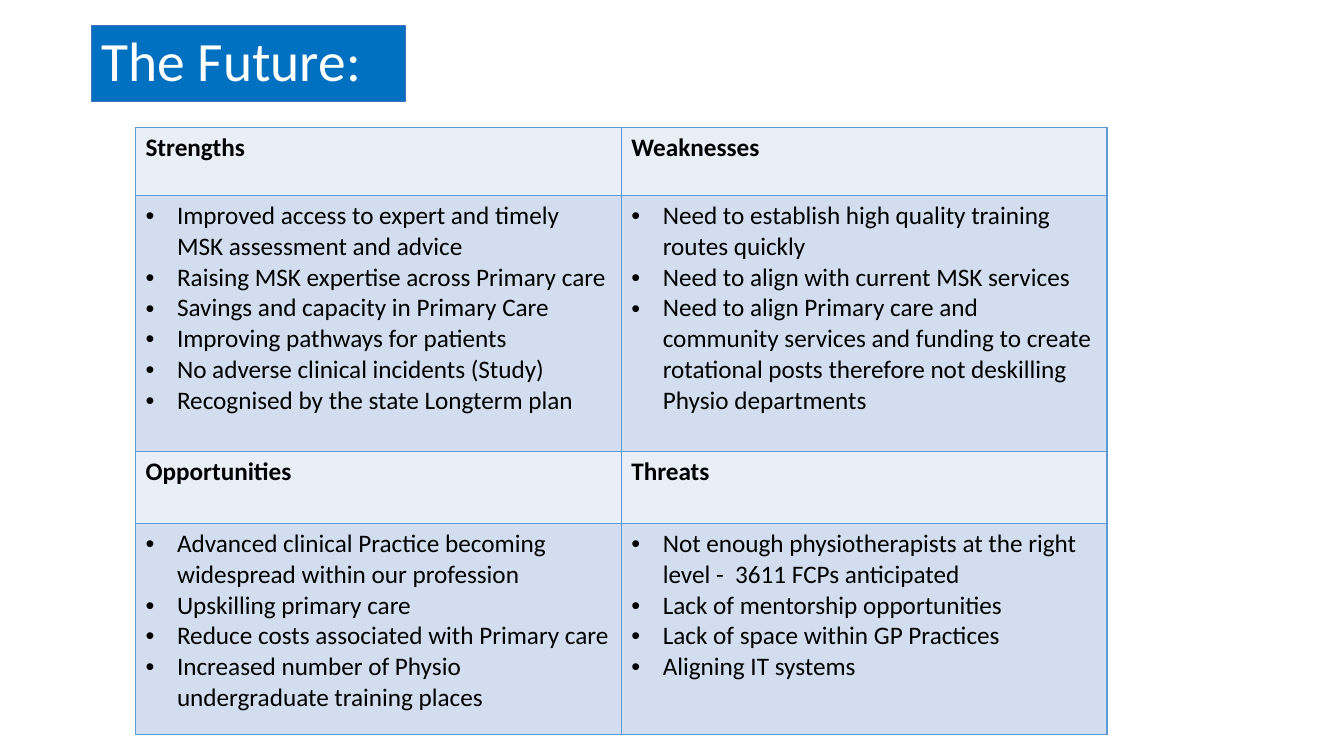
import pptx
import pptx.dml.color
import pptx.enum.shapes
import pptx.enum.text
import pptx.oxml.ns
import pptx.util
from lxml import etree

Pt = pptx.util.Pt
qn = pptx.oxml.ns.qn

FONT = "Calibri"
HEADING_FILL = "EAEFF7"
LIST_FILL = "D2DEEF"
BORDER = "5B9BD5"
INDENT = 22.5
ROW_HEIGHTS = [48.5, 182.8, 51.4, 151]
COLUMN_WIDTH = 347

SWOT = [
    [
        ("Strengths", [
            "Improved access to expert and timely MSK assessment and advice",
            "Raising MSK expertise across Primary care",
            "Savings and capacity in Primary Care",
            "Improving pathways for patients",
            "No adverse clinical incidents (Study)",
            "Recognised by the state Longterm plan",
        ]),
        ("Weaknesses", [
            "Need to establish high quality training routes quickly",
            "Need to align with current MSK services",
            "Need to align Primary care and community services and funding "
            "to create rotational posts therefore not deskilling Physio departments",
        ]),
    ],
    [
        ("Opportunities", [
            "Advanced clinical Practice becoming widespread within our profession",
            "Upskilling primary care",
            "Reduce costs associated with Primary care",
            "Increased number of Physio undergraduate training places",
        ]),
        ("Threats", [
            "Not enough physiotherapists at the right level -  3611 FCPs anticipated",
            "Lack of mentorship opportunities",
            "Lack of space within GP Practices",
            "Aligning IT systems",
        ]),
    ],
]


def color(value):
    return pptx.dml.color.RGBColor.from_string(value)


def add_bullet(paragraph):
    properties = paragraph._p.get_or_add_pPr()
    properties.set("marL", str(Pt(INDENT)))
    properties.set("indent", str(-Pt(INDENT)))
    etree.SubElement(properties, qn("a:buFont"), typeface="Arial")
    etree.SubElement(properties, qn("a:buChar"), char="•")


def write_text(frame, lines, size=18, fill="000000", bold=False, bullets=False, spacing=None):
    for index, line in enumerate(lines):
        paragraph = frame.add_paragraph() if index else frame.paragraphs[0]
        paragraph.alignment = pptx.enum.text.PP_ALIGN.LEFT
        if spacing:
            paragraph.line_spacing = spacing
        if bullets:
            add_bullet(paragraph)
        run = paragraph.add_run()
        run.text = line
        run.font.name = FONT
        run.font.size = Pt(size)
        run.font.bold = bold
        run.font.color.rgb = color(fill)


def add_title(slide, text):
    shape = slide.shapes.add_shape(
        pptx.enum.shapes.MSO_SHAPE.RECTANGLE, Pt(65.5), Pt(18.2), Pt(224), Pt(54.2)
    )
    shape.shadow.inherit = False
    shape.fill.solid()
    shape.fill.fore_color.rgb = color("0070C0")
    shape.line.color.rgb = color("4472C4")
    shape.line.width = Pt(1)
    shape.text_frame.word_wrap = True
    shape.text_frame.vertical_anchor = pptx.enum.text.MSO_ANCHOR.MIDDLE
    write_text(shape.text_frame, [text], size=39.6, fill="FFFFFF", spacing=0.9)


def style_cell(cell, fill):
    properties = cell._tc.get_or_add_tcPr()
    for side in ("lnL", "lnR", "lnT", "lnB"):
        line = etree.SubElement(properties, qn("a:" + side), w=str(Pt(1)))
        solid = etree.SubElement(line, qn("a:solidFill"))
        etree.SubElement(solid, qn("a:srgbClr"), val=BORDER)
    cell.fill.solid()
    cell.fill.fore_color.rgb = color(fill)


def add_swot_table(slide):
    frame = slide.shapes.add_table(
        len(ROW_HEIGHTS), 2, Pt(96.75), Pt(91.25),
        Pt(2 * COLUMN_WIDTH), Pt(sum(ROW_HEIGHTS))
    )
    table = frame.table
    table.first_row = False
    table.horz_banding = False
    for column in table.columns:
        column.width = Pt(COLUMN_WIDTH)
    for row, height in zip(table.rows, ROW_HEIGHTS):
        row.height = Pt(height)
    for pair_index, pair in enumerate(SWOT):
        for column_index, (heading, points) in enumerate(pair):
            heading_cell = table.cell(2 * pair_index, column_index)
            style_cell(heading_cell, HEADING_FILL)
            write_text(heading_cell.text_frame, [heading], bold=True)
            list_cell = table.cell(2 * pair_index + 1, column_index)
            style_cell(list_cell, LIST_FILL)
            write_text(list_cell.text_frame, points, bullets=True)


def main():
    presentation = pptx.Presentation()
    presentation.slide_width = Pt(960)
    presentation.slide_height = Pt(540)
    slide = presentation.slides.add_slide(presentation.slide_layouts[6])
    add_title(slide, "The Future:")
    add_swot_table(slide)
    presentation.save("out.pptx")


if __name__ == "__main__":
    main()
